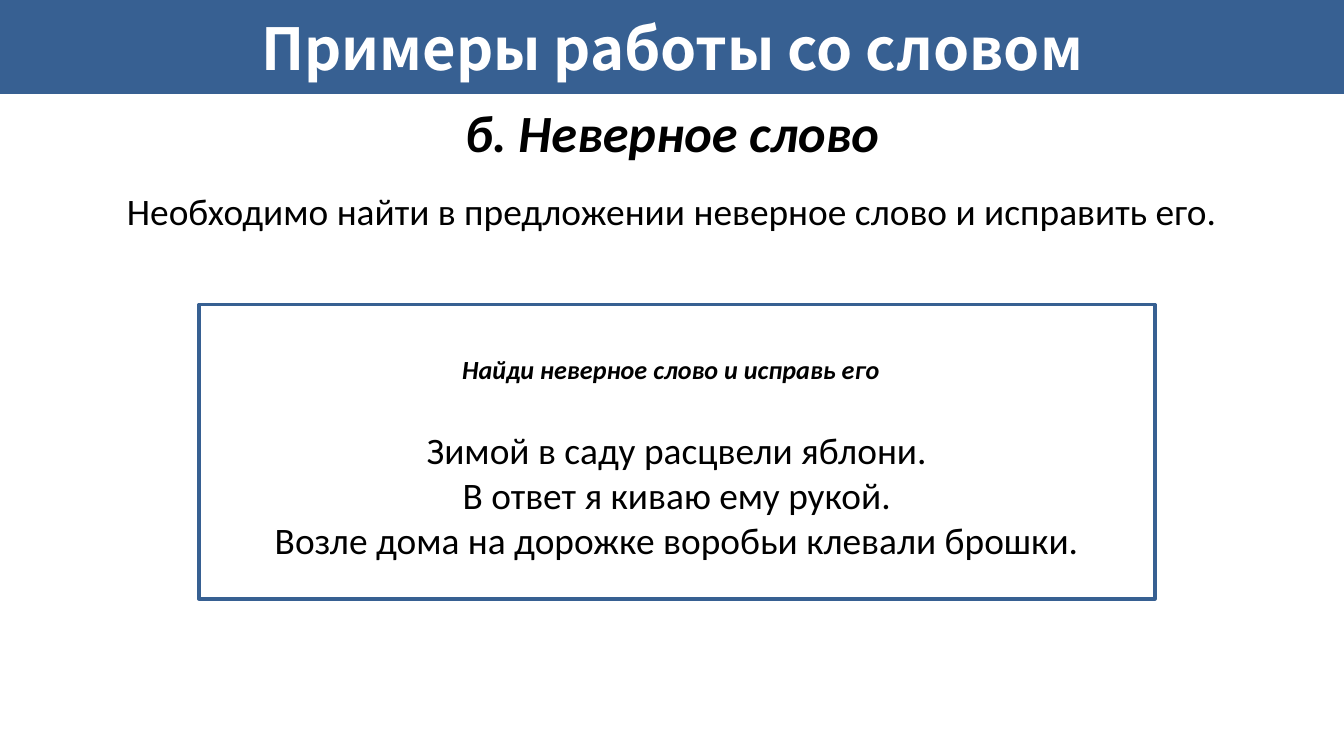
from dataclasses import dataclass

from pptx import Presentation
from pptx.dml.color import RGBColor
from pptx.enum.shapes import MSO_SHAPE
from pptx.enum.text import MSO_ANCHOR, PP_ALIGN
from pptx.util import Pt

RECTANGLE = MSO_SHAPE.RECTANGLE
MIDDLE = MSO_ANCHOR.MIDDLE
CENTER = PP_ALIGN.CENTER


@dataclass(frozen=True)
class Theme:
    blue: RGBColor = RGBColor(0x37, 0x60, 0x92)
    white: RGBColor = RGBColor(0xFF, 0xFF, 0xFF)
    black: RGBColor = RGBColor(0, 0, 0)
    title_font: str = "Noto Sans CJK JP"
    body_font: str = "Calibri"
    title_size: float = 31
    heading_size: float = 28
    body_size: float = 20
    task_size: float = 14
    outline: float = 2


@dataclass(frozen=True)
class Area:
    left: float
    top: float
    width: float
    height: float

    def lengths(self):
        return [Pt(value) for value in (self.left, self.top, self.width, self.height)]


@dataclass(frozen=True)
class Line:
    text: str
    size: float
    emphasis: bool = False
    space_before: float = 0


THEME = Theme()
PAGE = Area(0, 0, 720, 405)
BANNER = Area(0, 0, PAGE.width, 50.4)
CARD = Area(106.6, 163.2, 512, 157.6)

TEXTS = [
    (Area(0, 50.4, PAGE.width, 78.5), [
        Line("б. Неверное слово", THEME.heading_size, emphasis=True),
        Line("Необходимо найти в предложении неверное слово и исправить его.",
             THEME.body_size, space_before=13.4),
    ]),
    (Area(224.6, 185.8, 270, 24.5), [
        Line("Найди неверное слово и исправь его", THEME.task_size, emphasis=True),
    ]),
    (Area(CARD.left, 225.4, CARD.width, 80), [
        Line("Зимой в саду расцвели яблони.", THEME.body_size),
        Line("В ответ я киваю ему рукой.", THEME.body_size),
        Line("Возле дома на дорожке воробьи клевали брошки.", THEME.body_size),
    ]),
]


def add_rectangle(page, area: Area, fill: RGBColor):
    box = page.shapes.add_shape(RECTANGLE, *area.lengths())
    box.shadow.inherit = False
    box.fill.solid()
    box.fill.fore_color.rgb = fill
    box.line.fill.background()
    return box


def write_line(para, line: Line, font_name: str, color: RGBColor) -> None:
    para.text = line.text
    para.alignment = CENTER
    para.space_before = Pt(line.space_before)
    para.font.name = font_name
    para.font.size = Pt(line.size)
    para.font.bold = para.font.italic = line.emphasis
    para.font.color.rgb = color


def add_text(page, area: Area, lines: list[Line]) -> None:
    frame = page.shapes.add_textbox(*area.lengths()).text_frame
    frame.word_wrap = True
    for index, line in enumerate(lines):
        para = frame.add_paragraph() if index else frame.paragraphs[0]
        write_line(para, line, THEME.body_font, THEME.black)


def add_banner(page) -> None:
    frame = add_rectangle(page, BANNER, THEME.blue).text_frame
    frame.vertical_anchor = MIDDLE
    para = frame.paragraphs[0]
    title = Line("Примеры работы со словом", THEME.title_size)
    write_line(para, title, THEME.title_font, THEME.white)
    para.font.bold = True


def add_card(page) -> None:
    card = add_rectangle(page, CARD, THEME.white)
    card.line.color.rgb = THEME.blue
    card.line.width = Pt(THEME.outline)


def main() -> None:
    deck = Presentation()
    deck.slide_width, deck.slide_height = Pt(PAGE.width), Pt(PAGE.height)
    page = deck.slides.add_slide(deck.slide_layouts[6])
    add_banner(page)
    add_card(page)
    for area, lines in TEXTS:
        add_text(page, area, lines)
    deck.save("out.pptx")


if __name__ == "__main__":
    main()
